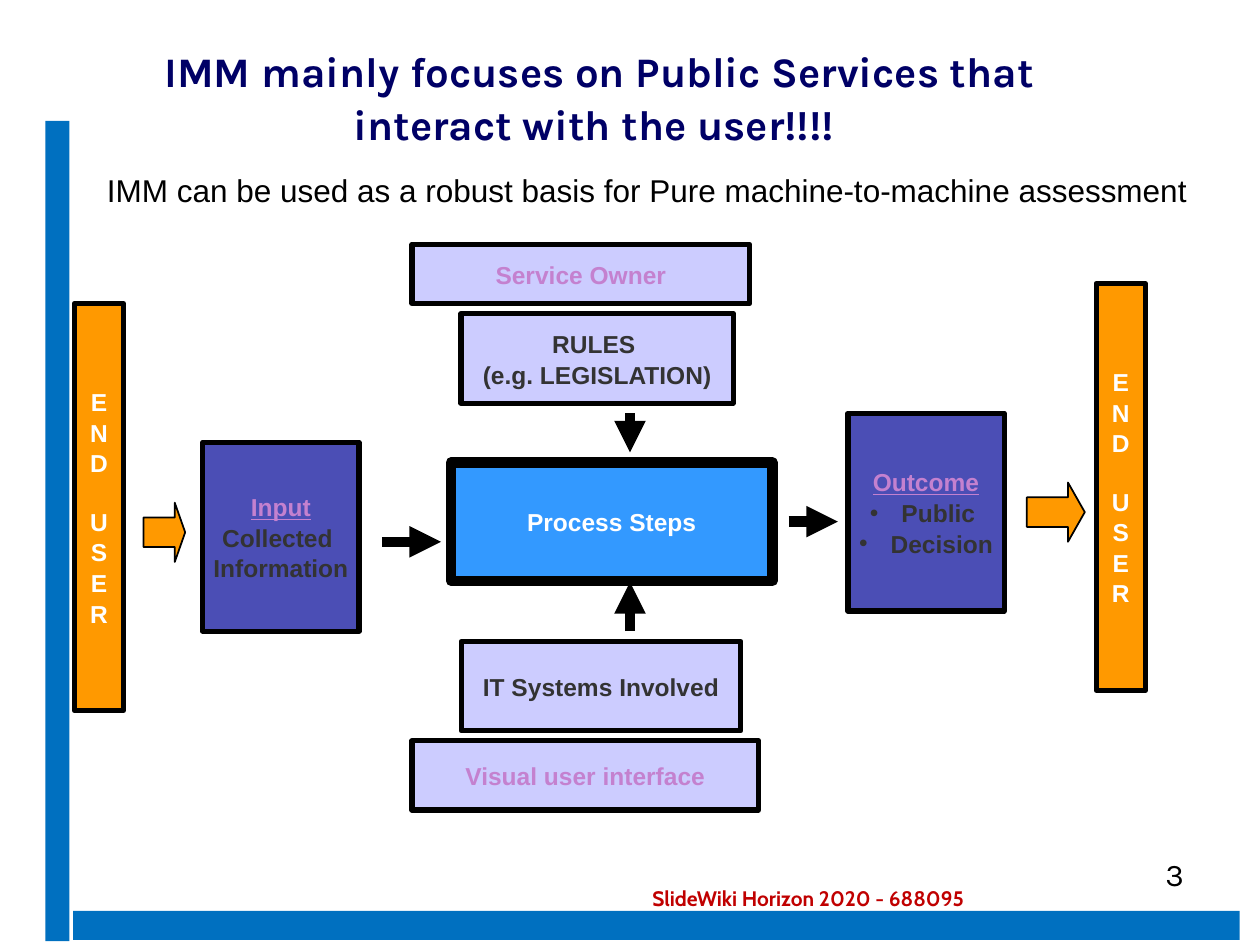
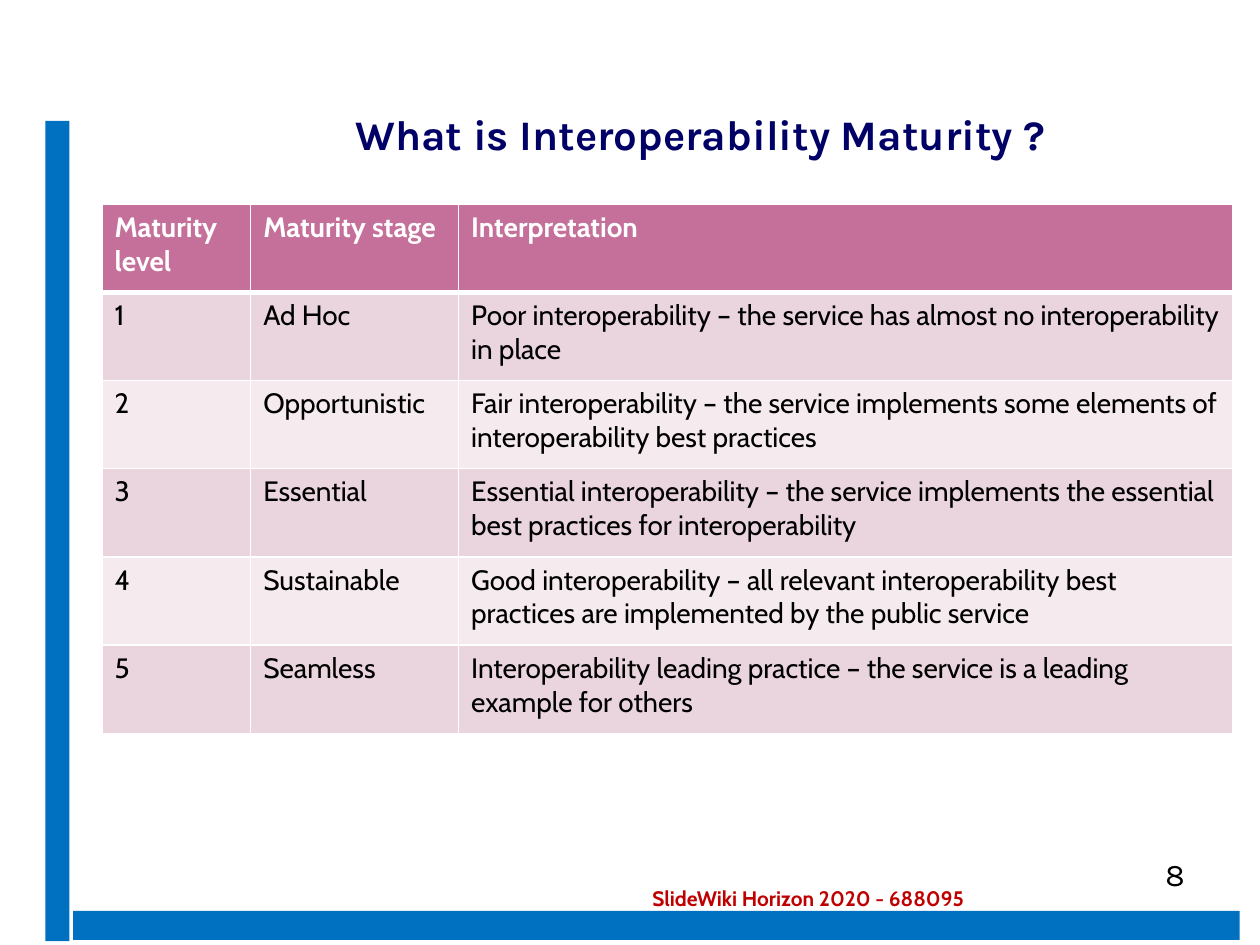
from dataclasses import dataclass
from typing import Optional

from lxml import etree
from pptx import Presentation
from pptx import util as u
from pptx.dml import color
from pptx.enum import shapes, text
from pptx.oxml import ns

Pt = u.Pt
COLORS = {
    "band": "0070C0", "credit": "C00000", "title": "000066", "black": "000000",
    "white": "FFFFFF", "process": "3399FF", "exchange": "4B4EB5", "support": "CCCCFF",
    "user": "FF9900", "dark": "333333", "pink": "C481CF",
    "header": "C4709A", "odd_row": "EAD5DE", "even_row": "F5EBEF",
}
BODY, HEADING, SANS = "Cabin", "Karla", "Arial"
LINE_SPACING = 1.04


@dataclass(frozen=True)
class Area:
    left: float
    top: float
    width: float
    height: float

    def lengths(self) -> tuple:
        return Pt(self.left), Pt(self.top), Pt(self.width), Pt(self.height)


@dataclass(frozen=True)
class Style:
    font: str
    size: float
    color: str
    bold: bool = False
    underline: bool = False


@dataclass(frozen=True)
class Line:
    words: str
    color: str = "dark"
    underline: bool = False
    bullet: bool = False
    gap: float = 0


@dataclass(frozen=True)
class Box:
    area: Area
    fill: str
    lines: tuple
    border: float = 3


@dataclass(frozen=True)
class Flow:
    start: tuple
    end: tuple


@dataclass(frozen=True)
class UserArrow:
    area: Area
    head: float


TITLE = Style(HEADING, 24, "title", bold=True)
CREDIT = Style(BODY, 12, "credit", bold=True)
PAGE_NUMBER = Style(HEADING, 18, "black")
SUBTITLE = Style(SANS, 18, "black")
TABLE_HEAD = Style(BODY, 16, "white", bold=True)
TABLE_BODY = Style(BODY, 16, "black")

BANDS = (Area(25.92, 69.12, 13.68, 468.72), Area(41.76, 520.56, 666.72, 16.56))
CREDIT_AREA = Area(365.76, 502.56, 302.4, 21.6)
NUMBER_AREA = Area(658.8, 485.28, 54.72, 31.68)

END_USER = tuple(Line(letter, "white", gap=16 if letter == "U" else 0)
                 for letter in "ENDUSER")
BOXES = (
    Box(Area(257.76, 264.24, 183.6, 67.68), "process",
        (Line("Process Steps", "white"),), border=6),
    Box(Area(484.56, 236.16, 89.28, 113.04), "exchange",
        (Line("Outcome", "pink", underline=True),
         Line("Public ", bullet=True), Line("Decision", bullet=True))),
    Box(Area(115.92, 252.72, 89.28, 108), "exchange",
        (Line("Input", "pink", underline=True), Line("Collected "), Line("Information"))),
    Box(Area(263.52, 179.28, 155.52, 51.12), "support",
        (Line("RULES "), Line("(e.g. LEGISLATION)"))),
    Box(Area(263.52, 366.48, 159.84, 51.12), "support", (Line("IT Systems Involved"),)),
    Box(Area(42.48, 173.52, 28.08, 232.56), "user", END_USER),
    Box(Area(626.4, 162, 28.08, 232.56), "user", END_USER),
    Box(Area(235.44, 139.68, 192.96, 33.84), "support", (Line("Service Owner", "pink"),)),
    Box(Area(235.44, 423.36, 198, 39.6), "support",
        (Line("Visual user interface", "pink"),)),
)
FLOWS = (
    Flow((218.16, 309.6), (252, 309.6)),
    Flow((450.72, 298.08), (478.8, 298.08)),
    Flow((360, 236.16), (360, 258.48)),
    Flow((360, 360.72), (360, 332.64)),
)
USER_ARROWS = (
    UserArrow(Area(82.08, 287.28, 23.76, 33.84), 0.25),
    UserArrow(Area(586.8, 275.76, 33.12, 33.84), 0.29),
)

COLUMN_WIDTHS = (84.96, 118.8, 442.4)
ROW_HEIGHT = 50.4
MATURITY_ROWS = (
    ("Maturity level", "Maturity stage", "Interpretation"),
    ("1", "Ad Hoc",
     "Poor interoperability – the service has almost no interoperability in place"),
    ("2", "Opportunistic",
     "Fair interoperability – the service implements some elements of "
     "interoperability best practices"),
    ("3", "Essential",
     "Essential interoperability – the service implements the essential best "
     "practices for interoperability"),
    ("4", "Sustainable",
     "Good interoperability – all relevant interoperability best practices are "
     "implemented by the public service"),
    ("5", "Seamless",
     "Interoperability leading practice – the service is a leading example for others"),
)


def rgb(name: str) -> color.RGBColor:
    return color.RGBColor.from_string(COLORS[name])


def add_run(paragraph, words: str, style: Style) -> None:
    run = paragraph.add_run()
    run.text = words
    run.font.name = style.font
    run.font.size = Pt(style.size)
    run.font.bold = style.bold
    run.font.underline = style.underline
    run.font.color.rgb = rgb(style.color)


def add_shape(slide, kind, area: Area, fill: str, border: float = 0):
    shape = slide.shapes.add_shape(kind, *area.lengths())
    shape.shadow.inherit = False
    shape.fill.solid()
    shape.fill.fore_color.rgb = rgb(fill)
    if border:
        shape.line.color.rgb = rgb("black")
        shape.line.width = Pt(border)
    else:
        shape.line.fill.background()
    return shape


def add_label(slide, area: Area, words: str, style: Style, wrap: bool = True) -> None:
    frame = slide.shapes.add_textbox(*area.lengths()).text_frame
    frame.word_wrap = wrap
    add_run(frame.paragraphs[0], words, style)


def add_bullet(paragraph) -> None:
    properties = paragraph._p.get_or_add_pPr()
    properties.set("marL", str(Pt(18)))
    properties.set("indent", str(-Pt(18)))
    etree.SubElement(properties, ns.qn("a:buFont"), typeface=SANS)
    etree.SubElement(properties, ns.qn("a:buChar"), char="•")


def add_box(slide, box: Box) -> None:
    shape = add_shape(slide, shapes.MSO_SHAPE.RECTANGLE, box.area, box.fill, box.border)
    frame = shape.text_frame
    frame.word_wrap = False
    frame.vertical_anchor = text.MSO_ANCHOR.MIDDLE
    for index, line in enumerate(box.lines):
        paragraph = frame.add_paragraph() if index else frame.paragraphs[0]
        paragraph.alignment = text.PP_ALIGN.CENTER
        paragraph.line_spacing = LINE_SPACING
        if line.gap:
            paragraph.space_before = Pt(line.gap)
        if line.bullet:
            add_bullet(paragraph)
        add_run(paragraph, line.words, Style(SANS, 14, line.color, True, line.underline))


def add_flow(slide, flow: Flow) -> None:
    connector = slide.shapes.add_connector(
        shapes.MSO_CONNECTOR.STRAIGHT, *map(Pt, flow.start + flow.end))
    connector.line.color.rgb = rgb("black")
    connector.line.width = Pt(6)
    etree.SubElement(connector.line._get_or_add_ln(), ns.qn("a:tailEnd"), type="triangle")
    etree.SubElement(connector._element.spPr, ns.qn("a:effectLst"))


def add_user_arrow(slide, arrow: UserArrow) -> None:
    shape = add_shape(slide, shapes.MSO_SHAPE.RIGHT_ARROW, arrow.area, "user", 1)
    shape.adjustments[0] = 0.5
    shape.adjustments[1] = arrow.head


def set_borders(cell, bottom: Optional[float] = None) -> None:
    properties = cell._tc.get_or_add_tcPr()
    for index, side in enumerate(("lnL", "lnR", "lnT", "lnB")):
        width = bottom if bottom and side == "lnB" else 1
        border = etree.Element(ns.qn(f"a:{side}"), w=str(Pt(width)))
        fill = etree.SubElement(border, ns.qn("a:solidFill"))
        etree.SubElement(fill, ns.qn("a:srgbClr"), val=COLORS["white"])
        properties.insert(index, border)


def add_maturity_table(slide) -> None:
    area = Area(58.32, 116.64, sum(COLUMN_WIDTHS), ROW_HEIGHT * len(MATURITY_ROWS))
    table = slide.shapes.add_table(
        len(MATURITY_ROWS), len(COLUMN_WIDTHS), *area.lengths()).table
    for column, width in zip(table.columns, COLUMN_WIDTHS):
        column.width = Pt(width)
    for level, (row, entries) in enumerate(zip(table.rows, MATURITY_ROWS)):
        row.height = Pt(ROW_HEIGHT)
        fill = ("odd_row" if level % 2 else "even_row") if level else "header"
        for cell, words in zip(row.cells, entries):
            cell.fill.solid()
            cell.fill.fore_color.rgb = rgb(fill)
            set_borders(cell, None if level else 3)
            add_run(cell.text_frame.paragraphs[0], words,
                    TABLE_BODY if level else TABLE_HEAD)


def start_slide(deck, title: str, title_area: Area, number: int):
    slide = deck.slides.add_slide(deck.slide_layouts[5])
    for band in BANDS:
        add_shape(slide, shapes.MSO_SHAPE.RECTANGLE, band, "band")
    add_label(slide, CREDIT_AREA, "SlideWiki Horizon 2020 - 688095", CREDIT)
    heading = slide.shapes.title
    heading.left, heading.top, heading.width, heading.height = title_area.lengths()
    frame = heading.text_frame
    frame.word_wrap = True
    frame.auto_size = text.MSO_AUTO_SIZE.NONE
    frame.vertical_anchor = text.MSO_ANCHOR.BOTTOM
    paragraph = frame.paragraphs[0]
    paragraph.alignment = text.PP_ALIGN.CENTER
    paragraph.line_spacing = LINE_SPACING
    add_run(paragraph, title, TITLE)
    add_label(slide, NUMBER_AREA, str(number), PAGE_NUMBER)
    return slide


def build_focus_slide(deck) -> None:
    slide = start_slide(
        deck, "IMM mainly focuses on Public Services that interact with the user!!!! ",
        Area(80.64, 20.16, 523.44, 68.4), 3)
    for box in BOXES:
        add_box(slide, box)
    for flow in FLOWS:
        add_flow(slide, flow)
    for arrow in USER_ARROWS:
        add_user_arrow(slide, arrow)
    add_label(slide, Area(54, 94.32, 637.92, 28.8),
              "IMM can be used as a robust basis for Pure machine-to-machine assessment",
              SUBTITLE, wrap=False)


def build_maturity_slide(deck) -> None:
    slide = start_slide(deck, "What is Interoperability Maturity ?",
                        Area(93.6, 15.12, 613.44, 79.2), 8)
    add_maturity_table(slide)


def main() -> None:
    deck = Presentation()
    deck.slide_width, deck.slide_height = Pt(720), Pt(540)
    build_focus_slide(deck)
    build_maturity_slide(deck)
    deck.save("out.pptx")


if __name__ == "__main__":
    main()
